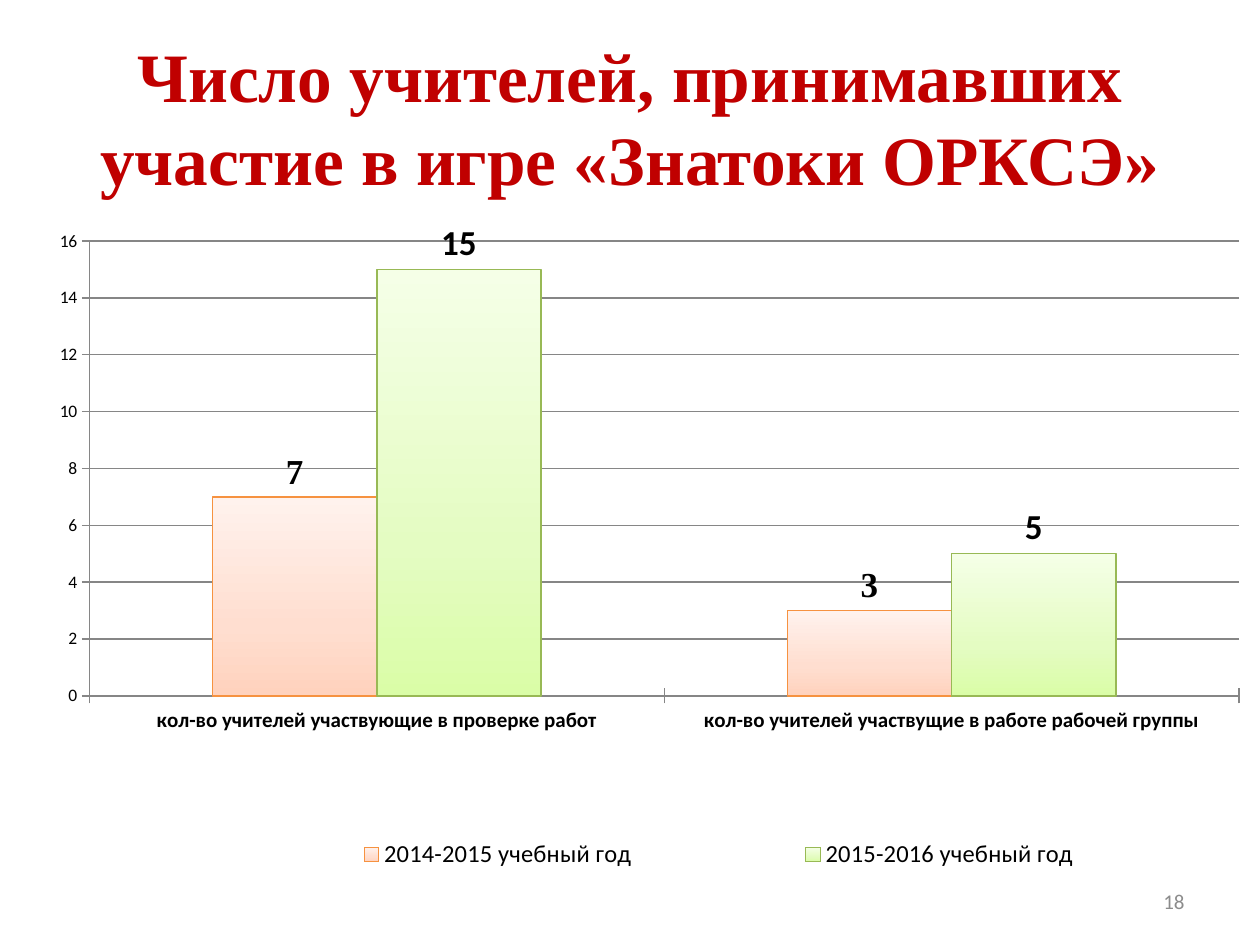
from copy import deepcopy

from pptx import Presentation
from pptx.chart.data import CategoryChartData
from pptx.dml.color import RGBColor
from pptx.enum.chart import XL_CHART_TYPE, XL_LEGEND_POSITION, XL_TICK_MARK
from pptx.enum.text import MSO_ANCHOR, PP_ALIGN
from pptx.oxml import parse_xml
from pptx.oxml.ns import nsdecls
from pptx.util import Inches, Pt

RED = RGBColor(0xC0, 0x00, 0x00)
BLACK = RGBColor(0x00, 0x00, 0x00)
GRAY = RGBColor(0x8C, 0x8C, 0x8C)
AXIS_GRAY = RGBColor(0x86, 0x86, 0x86)
ORANGE = RGBColor(0xF6, 0x92, 0x40)
GREEN = RGBColor(0x98, 0xB9, 0x55)
ORANGE_TINTS = [RGBColor(0xFF, 0xD2, 0xBD), RGBColor(0xFF, 0xDE, 0xD0), RGBColor(0xFF, 0xF2, 0xED)]
GREEN_TINTS = [RGBColor(0xDA, 0xFD, 0xA7), RGBColor(0xE4, 0xFC, 0xC2), RGBColor(0xF5, 0xFF, 0xE7)]
TINT_POSITIONS = [0, 0.35, 1]

SANS = "Calibri"
SERIF = "Times New Roman"

CATEGORIES = [
    "кол-во учителей участвующие в проверке работ",
    "кол-во учителей участвущие в работе рабочей группы",
]
# Name, values, line colour, gradient colours, label font
YEARS = [
    ("2014-2015 учебный год", (7, 3), ORANGE, ORANGE_TINTS, SERIF),
    ("2015-2016 учебный год", (15, 5), GREEN, GREEN_TINTS, SANS),
]


def set_font(font, name, size, color, bold=False):
    font.name = name
    font.size = Pt(size)
    font.bold = bold
    font.color.rgb = color


def write_text(shape, text, align, name, size, color, bold=False):
    frame = shape.text_frame
    frame.text = text
    frame.word_wrap = True
    frame.vertical_anchor = MSO_ANCHOR.MIDDLE
    paragraph = frame.paragraphs[0]
    paragraph.alignment = align
    set_font(paragraph.runs[0].font, name, size, color, bold)


def add_title(slide):
    title = slide.shapes.title
    title.left, title.top = Inches(0.5), Inches(0.3)
    title.width, title.height = Inches(9), Inches(1.25)
    write_text(title, "Число учителей, принимавших участие в игре «Знатоки ОРКСЭ»",
               PP_ALIGN.CENTER, SERIF, 39.6, RED, bold=True)


def add_slide_number(slide):
    number = slide.shapes.add_textbox(Inches(7.17), Inches(6.95), Inches(2.33), Inches(0.4))
    write_text(number, "18", PP_ALIGN.RIGHT, SANS, 12, GRAY)


def manual_layout(x, y, w, h, inner=False):
    target = '<c:layoutTarget val="inner"/>' if inner else ""
    return parse_xml(
        f'<c:layout {nsdecls("c")}><c:manualLayout>{target}'
        '<c:xMode val="edge"/><c:yMode val="edge"/>'
        f'<c:x val="{x}"/><c:y val="{y}"/><c:w val="{w}"/><c:h val="{h}"/>'
        '</c:manualLayout></c:layout>')


def style_series(series, line_color, tints, label_font):
    # Three-stop gradient running upwards
    fill = series.format.fill
    fill.gradient()
    fill.gradient_angle = 90
    stop_list = series._element.xpath(".//a:gsLst")[0]
    stop_list.append(deepcopy(stop_list[-1]))
    for stop, position, tint in zip(fill.gradient_stops, TINT_POSITIONS, tints):
        stop.position = position
        stop.color.rgb = tint
    series.format.line.color.rgb = line_color
    series.format.line.width = Pt(0.75)

    labels = series.data_labels
    labels.show_value = True
    set_font(labels.font, label_font, 20, BLACK, bold=True)


def style_axis(axis, size, bold):
    axis.major_tick_mark = XL_TICK_MARK.CROSS
    axis.format.line.color.rgb = AXIS_GRAY
    set_font(axis.tick_labels.font, SANS, size, BLACK, bold)


def add_teacher_chart(slide):
    data = CategoryChartData()
    data.categories = CATEGORIES
    for name, values, *_ in YEARS:
        data.add_series(name, values)
    chart = slide.shapes.add_chart(XL_CHART_TYPE.COLUMN_CLUSTERED, Inches(0.23), Inches(1.64),
                                   Inches(9.61), Inches(5.47), data).chart
    chart.has_title = False
    set_font(chart.font, SANS, 10, BLACK)

    plot = chart.plots[0]
    plot.vary_by_categories = False
    plot.gap_width = 150
    for series, (_, _, *style) in zip(plot.series, YEARS):
        style_series(series, *style)

    # Axes
    style_axis(chart.category_axis, 12, True)
    style_axis(chart.value_axis, 10, False)
    chart.value_axis.minimum_scale = 0
    chart.value_axis.maximum_scale = 16
    chart.value_axis.major_unit = 2
    chart.value_axis.major_gridlines.format.line.color.rgb = AXIS_GRAY

    # Legend under the plot
    chart.has_legend = True
    legend = chart.legend
    legend.position = XL_LEGEND_POSITION.RIGHT
    legend.include_in_layout = False
    set_font(legend.font, SANS, 14, BLACK)

    # Plot and legend placement
    plot_area = chart._chartSpace.chart.plotArea
    for old_layout in plot_area.xpath("c:layout"):
        plot_area.remove(old_layout)
    plot_area.insert(0, manual_layout(0.05, 0.05, 0.95, 0.66, inner=True))
    for old_layout in legend._element.xpath("c:layout"):
        legend._element.remove(old_layout)
    legend._element.xpath("c:legendPos")[0].addnext(manual_layout(0.14, 0.89, 0.86, 0.1))


def main():
    prs = Presentation()
    prs.slide_width, prs.slide_height = Inches(10), Inches(7.5)
    slide = prs.slides.add_slide(prs.slide_layouts[5])
    add_title(slide)
    add_teacher_chart(slide)
    add_slide_number(slide)
    prs.save("out.pptx")


if __name__ == "__main__":
    main()
